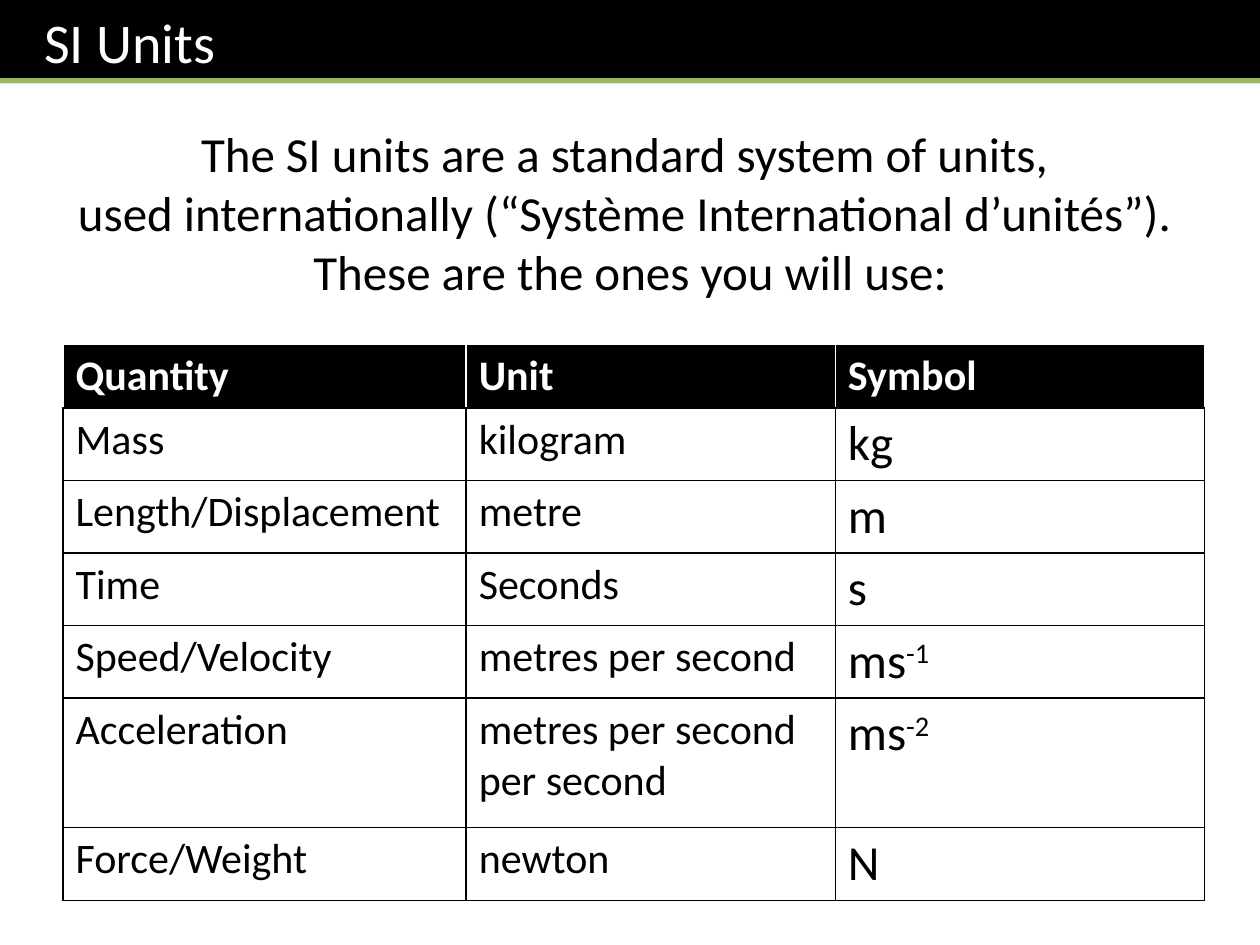
from dataclasses import dataclass

from lxml import etree
from pptx import Presentation
from pptx.dml.color import RGBColor
from pptx.enum.shapes import MSO_CONNECTOR
from pptx.enum.text import MSO_ANCHOR, MSO_AUTO_SIZE, PP_ALIGN
from pptx.oxml.ns import qn
from pptx.util import Inches, Pt

LINE = MSO_CONNECTOR.STRAIGHT
MID = MSO_ANCHOR.MIDDLE
FIXED = MSO_AUTO_SIZE.NONE
LEFT, CENTER = PP_ALIGN.LEFT, PP_ALIGN.CENTER

# Content: a symbol is a base and an exponent
TITLE = "SI Units"
INTRO = [
    "The SI units are a standard system of units, ",
    "used internationally (“Système International d’unités”). ",
    "These are the ones you will use:",
]
HEAD = ("Quantity", "Unit", ("Symbol", ""))
UNITS = [
    ("Mass", "kilogram", ("kg", "")),
    ("Length/Displacement", "metre", ("m", "")),
    ("Time", "Seconds", ("s", "")),
    ("Speed/Velocity", "metres per second", ("ms", "-1")),
    ("Acceleration", "metres per second per second", ("ms", "-2")),
    ("Force/Weight", "newton", ("N", "")),
]


@dataclass(frozen=True)
class Theme:
    font: str = "Calibri"
    black: str = "000000"
    white: str = "FFFFFF"
    green: str = "9BBB59"
    title: int = 32
    large: int = 28
    body: int = 24


T = Theme()
WIDE, HIGH = 10, 7.5
BAR, RULE = 0.66, 0.64
COLS = (3.2, 2.93, 2.93)
HEAD_H, ROW_H, TALL_H = 0.49, 0.57, 1.03
LONG = 20  # a unit name beyond this length takes two lines


def box(*sides):
    return [Inches(s) for s in sides]


def style(para, size, color, bold=False, align=LEFT):
    para.alignment = align
    font = para.font
    font.name, font.size, font.bold = T.font, Pt(size), bold
    font.color.rgb = RGBColor.from_string(color)


def edge(cell, side, color):
    ln = etree.SubElement(cell._tc.get_or_add_tcPr(), qn("a:ln" + side), w=str(Pt(1)))
    fill = etree.SubElement(ln, qn("a:solidFill"))
    etree.SubElement(fill, qn("a:srgbClr"), val=color)


def fill_cell(cell, text, head, size):
    base, power = text if isinstance(text, tuple) else (text, "")
    para = cell.text_frame.paragraphs[0]
    para.add_run().text = base
    if power:
        run = para.add_run()
        run.text = power
        run.font._element.set("baseline", "30000")
    style(para, size, T.white if head else T.black, bold=head)
    for side in "LRTB":
        edge(cell, side, T.white if head and side != "B" else T.black)
    if head:
        cell.fill.solid()
        cell.fill.fore_color.rgb = RGBColor.from_string(T.black)
    else:
        cell.fill.background()


deck = Presentation()
deck.slide_width, deck.slide_height = box(WIDE, HIGH)
slide = deck.slides.add_slide(deck.slide_layouts[5])
shapes = slide.shapes

# Title bar
title = shapes.title
title.left, title.top, title.width, title.height = box(0, 0, WIDE, BAR)
title.fill.solid()
title.fill.fore_color.rgb = RGBColor.from_string(T.black)
frame = title.text_frame
frame.text = TITLE
frame.auto_size, frame.vertical_anchor = FIXED, MID
frame.margin_left = Inches(0.35)
style(frame.paragraphs[0], T.title, T.white)

# Green rule under the title
rule = shapes.add_connector(LINE, *box(0, RULE, WIDE, RULE))
rule.line.color.rgb = RGBColor.from_string(T.green)
rule.line.width = Pt(3)
etree.SubElement(rule._element.spPr, qn("a:effectLst"))

# Table of units
rows = [HEAD] + UNITS
tall = [HEAD_H] + [TALL_H if len(u[1]) > LONG else ROW_H for u in UNITS]
table = shapes.add_table(len(rows), len(COLS),
                         *box(0.5, 2.73, sum(COLS), sum(tall))).table
table.horz_banding = False
for col, width in zip(table.columns, COLS):
    col.width = Inches(width)
for r, (row, height) in enumerate(zip(rows, tall)):
    table.rows[r].height = Inches(height)
    for c, text in enumerate(row):
        size = T.large if r and c == 2 else T.body
        fill_cell(table.cell(r, c), text, r == 0, size)

# Introduction
frame = shapes.add_textbox(*box(0, 0.93, WIDE, 1.51)).text_frame
frame.word_wrap = True
frame.text = "\n".join(INTRO)
for para in frame.paragraphs:
    style(para, T.large, T.black, align=CENTER)

deck.save("out.pptx")
